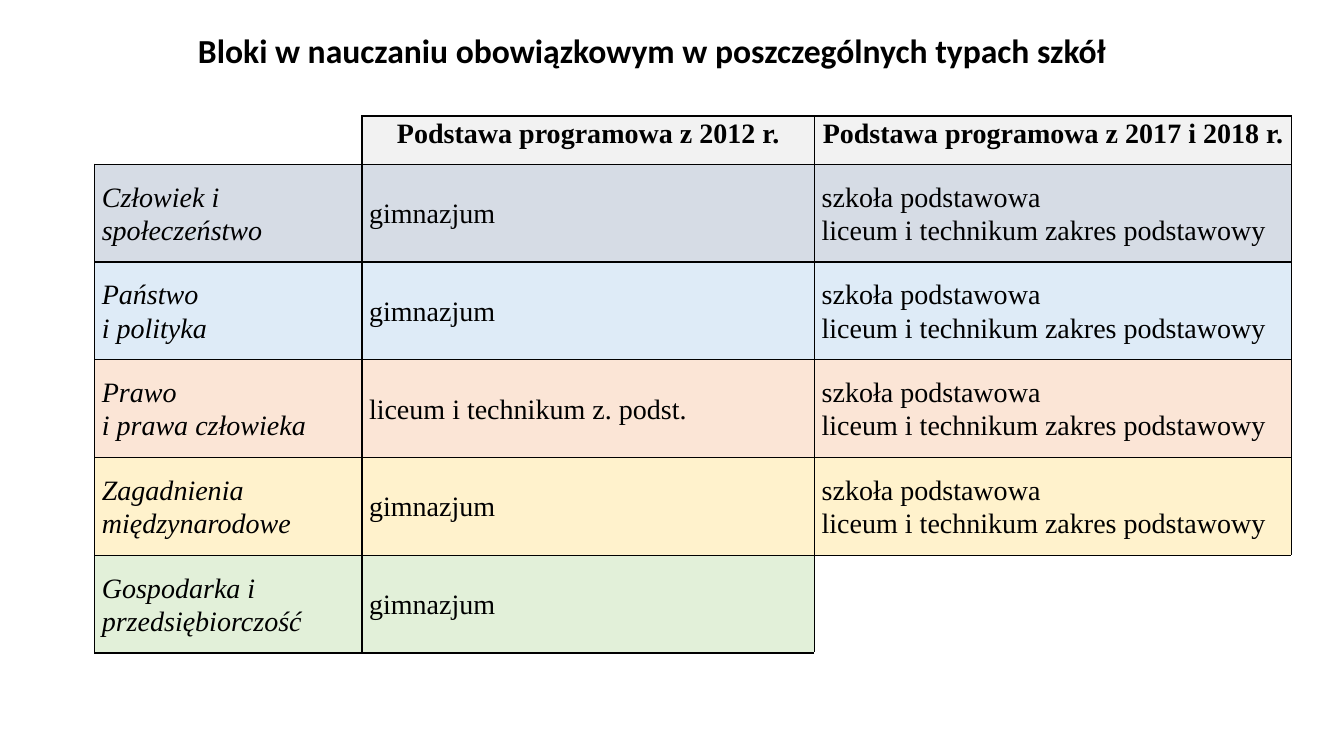
from dataclasses import dataclass

from pptx import Presentation
from pptx.dml.color import RGBColor
from pptx.enum.text import MSO_ANCHOR, PP_ALIGN
from pptx.oxml import parse_xml
from pptx.oxml.ns import nsdecls
from pptx.table import Table, _Cell
from pptx.text.text import TextFrame
from pptx.util import Inches, Pt

CENTER, LEFT = PP_ALIGN.CENTER, PP_ALIGN.LEFT
TOP, MIDDLE = MSO_ANCHOR.TOP, MSO_ANCHOR.MIDDLE

BLACK = RGBColor(0x00, 0x00, 0x00)
HEADER_GREY = RGBColor(0xF2, 0xF2, 0xF2)
SLATE = RGBColor(0xD6, 0xDC, 0xE5)
BLUE = RGBColor(0xDE, 0xEB, 0xF7)
ORANGE = RGBColor(0xFB, 0xE5, 0xD6)
YELLOW = RGBColor(0xFF, 0xF2, 0xCC)
GREEN = RGBColor(0xE2, 0xF0, 0xD9)

COLUMN_WIDTHS = (2.65, 4.49, 4.73)
HEADER_HEIGHT, BLOCK_HEIGHT = 0.48, 0.97
ALL_SIDES = "LRTB"

LOWER_SECONDARY = "gimnazjum"
PRIMARY_AND_UPPER = "szkoła podstawowa\nliceum i technikum zakres podstawowy"


@dataclass(frozen=True)
class Block:
    """One teaching block and the schools that cover it."""
    name: str
    schools_2012: str
    schools_2017: str
    color: RGBColor


BLOCKS = (
    Block("Człowiek i społeczeństwo", LOWER_SECONDARY, PRIMARY_AND_UPPER, SLATE),
    Block("Państwo\ni polityka", LOWER_SECONDARY, PRIMARY_AND_UPPER, BLUE),
    Block("Prawo\ni prawa człowieka", "liceum i technikum z. podst.",
          PRIMARY_AND_UPPER, ORANGE),
    Block("Zagadnienia międzynarodowe", LOWER_SECONDARY, PRIMARY_AND_UPPER, YELLOW),
    Block("Gospodarka i przedsiębiorczość", LOWER_SECONDARY, "", GREEN),
)


def write_text(frame: TextFrame, text: str, *, font: str = "Times New Roman",
               size: float = 20, bold: bool = False, italic: bool = False,
               align: PP_ALIGN = LEFT, spacing: float = 1.07) -> None:
    frame.text = text
    for paragraph in frame.paragraphs:
        paragraph.alignment = align
        paragraph.line_spacing = spacing
        for run in paragraph.runs:
            run.font.name = font
            run.font.size = Pt(size)
            run.font.bold = bold
            run.font.italic = italic
            run.font.color.rgb = BLACK


def draw_borders(cell: _Cell, sides: str) -> None:
    properties = cell._tc.get_or_add_tcPr()
    for index, side in enumerate(sides):
        properties.insert(index, parse_xml(
            f'<a:ln{side} {nsdecls("a")} w="{Pt(1)}"><a:solidFill>'
            f'<a:srgbClr val="{BLACK}"/></a:solidFill></a:ln{side}>'))


def fill_cell(cell: _Cell, text: str, color: RGBColor, *, bold: bool = False,
              italic: bool = False, align: PP_ALIGN = LEFT,
              anchor: MSO_ANCHOR = MIDDLE) -> None:
    cell.margin_left = cell.margin_right = Inches(0.07)
    cell.margin_top = cell.margin_bottom = 0
    cell.vertical_anchor = anchor
    cell.fill.solid()
    cell.fill.fore_color.rgb = color
    write_text(cell.text_frame, text, bold=bold, italic=italic, align=align)
    draw_borders(cell, ALL_SIDES)


def clear_cell(cell: _Cell, shared_sides: str) -> None:
    cell.fill.background()
    draw_borders(cell, shared_sides)


def fill_table(table: Table) -> None:
    table.first_row = table.horz_banding = False
    for column, width in zip(table.columns, COLUMN_WIDTHS):
        column.width = Inches(width)
    for row in table.rows:
        row.height = Inches(BLOCK_HEIGHT)
    table.rows[0].height = Inches(HEADER_HEIGHT)

    # Header row
    clear_cell(table.cell(0, 0), "RB")
    for column, years in enumerate(("2012 r.", "2017 i 2018 r."), start=1):
        fill_cell(table.cell(0, column), f"Podstawa programowa z {years}",
                  HEADER_GREY, bold=True, align=CENTER, anchor=TOP)

    # One row per block
    for row, block in enumerate(BLOCKS, start=1):
        fill_cell(table.cell(row, 0), block.name, block.color, italic=True)
        for column, schools in enumerate((block.schools_2012, block.schools_2017), start=1):
            if schools:
                fill_cell(table.cell(row, column), schools, block.color)
            else:
                clear_cell(table.cell(row, column), "LT")


def main() -> None:
    presentation = Presentation()
    presentation.slide_width, presentation.slide_height = Inches(13.33), Inches(7.5)
    slide = presentation.slides.add_slide(presentation.slide_layouts[5])

    # Title
    title = slide.shapes.title
    title.left, title.top = Inches(0.85), Inches(0.04)
    title.width, title.height = Inches(11.31), Inches(0.96)
    title.text_frame.vertical_anchor = MIDDLE
    write_text(title.text_frame,
               "Bloki w nauczaniu obowiązkowym w poszczególnych typach szkół ",
               font="Calibri", size=24, bold=True, align=CENTER, spacing=0.9)

    # Table of blocks
    blocks_frame = slide.shapes.add_table(
        len(BLOCKS) + 1, len(COLUMN_WIDTHS), Inches(0.94), Inches(1.15),
        Inches(sum(COLUMN_WIDTHS)), Inches(HEADER_HEIGHT + BLOCK_HEIGHT * len(BLOCKS)))
    fill_table(blocks_frame.table)

    presentation.save("out.pptx")


if __name__ == "__main__":
    main()
